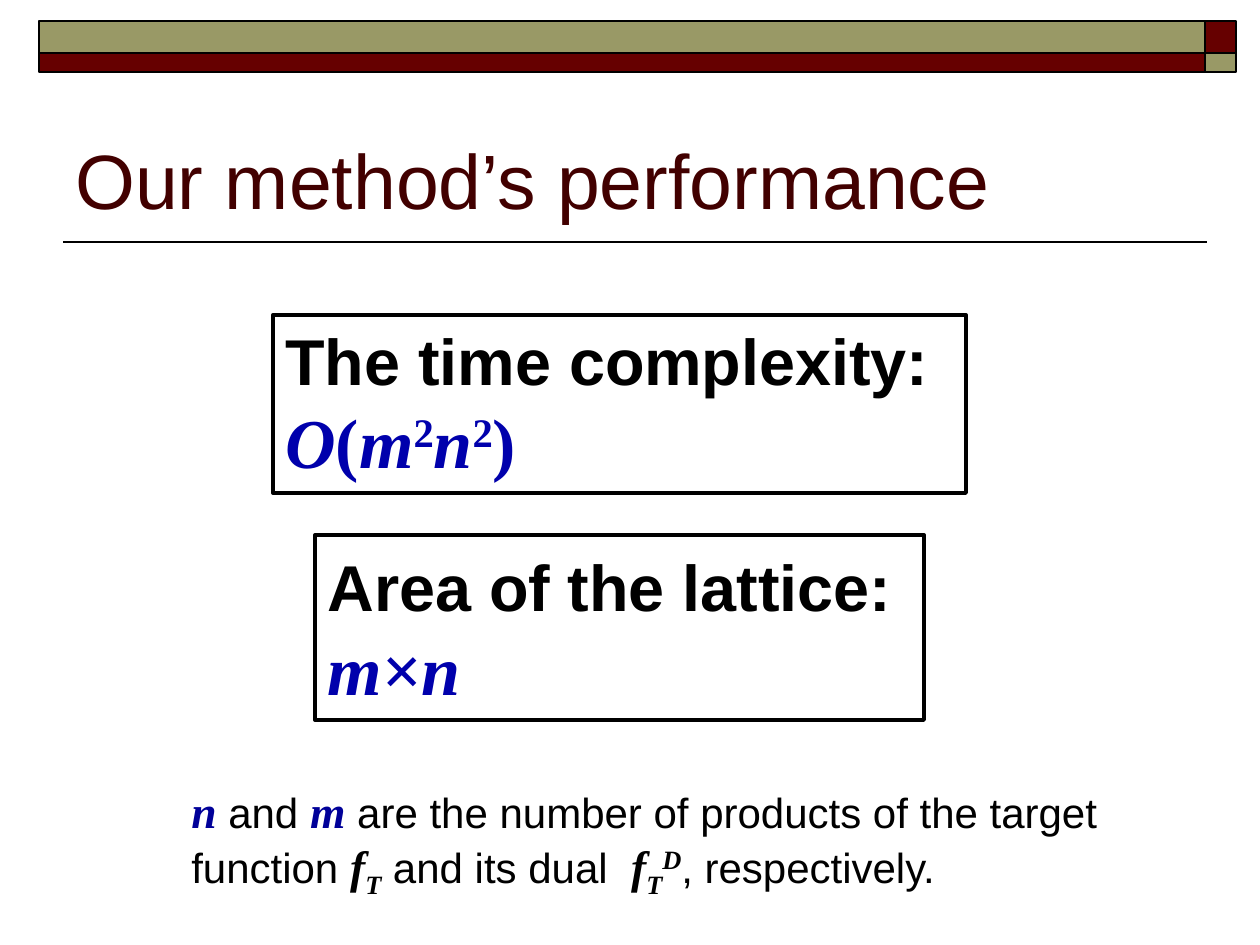
from dataclasses import dataclass
from lxml import etree
from pptx import Presentation
from pptx.dml.color import RGBColor
from pptx.enum.shapes import MSO_CONNECTOR, MSO_SHAPE
from pptx.enum.text import MSO_ANCHOR, MSO_AUTO_SIZE, PP_ALIGN
from pptx.oxml.ns import qn
from pptx.util import Emu, Pt

RECT = MSO_SHAPE.RECTANGLE
LINE = MSO_CONNECTOR.STRAIGHT
TOP, BOTTOM = MSO_ANCHOR.TOP, MSO_ANCHOR.BOTTOM
GROW = MSO_AUTO_SIZE.SHAPE_TO_FIT_TEXT
FIXED = MSO_AUTO_SIZE.NONE
LEFT = PP_ALIGN.LEFT


@dataclass(frozen=True)
class Theme:
    sans: str = "Arial"
    serif: str = "Times New Roman"
    black: str = "000000"
    olive: str = "999966"
    wine: str = "660000"
    title: str = "420000"
    math: str = "0000AC"
    var: str = "000099"
    big: int = 44
    head: int = 37
    form: int = 40
    note: int = 24
    sym: int = 26
    thin: float = 1
    thick: float = 2.25


T = Theme()
# font, size, colour, bold, italic, baseline
STYLES = {
    "title": (T.sans, T.big, T.title, False, False, 0),
    "head": (T.sans, T.head, T.black, True, False, 0),
    "gap": (T.serif, T.form, T.black, True, False, 0),
    "math": (T.serif, T.form, T.math, True, True, 0),
    "plain": (T.serif, T.form, T.math, True, False, 0),
    "power": (T.serif, T.form, T.math, True, False, 30),
    "note": (T.sans, T.note, T.black, False, False, 0),
    "var": (T.serif, T.sym, T.var, True, True, 0),
    "func": (T.serif, T.sym, T.black, True, True, 0),
    "sub": (T.serif, T.sym, T.black, True, True, -25),
    "sup": (T.serif, T.sym, T.black, True, True, 30),
}
TITLE = [[("Our method’s performance", "title")]]
AREA = [[("Area of the lattice:", "head"), (" ", "gap"), ("m×n", "math")]]
TIME = [
    [("The time complexity:", "head")],
    [("O", "math"), ("(", "plain"), ("m", "math"), ("2", "power"),
     ("n", "math"), ("2", "power"), (")", "plain")],
]
NOTE = [[
    ("n", "var"), (" and ", "note"), ("m", "var"),
    (" are the number of products of the target function ", "note"),
    ("f", "func"), ("T", "sub"), (" and its dual  ", "note"),
    ("f", "func"), ("T", "sub"), ("D", "sup"), (", respectively.", "note"),
]]
BOXES = [((315, 535, 609, 185), AREA), ((273, 315, 693, 178), TIME)]
COLS = [(39, 1166), (1205, 31)]
ROWS = [(21, 32), (53, 19)]
FILLS = [T.olive, T.wine]
RULE = (1207, 242, 63, 242)
WIDE, HIGH = 1260, 945
SCALE = 914400 / 126


def emu(*vals):
    return [Emu(round(v * SCALE)) for v in vals]


def color(code):
    return RGBColor.from_string(code)


def block(shapes, at, width, fill=None):
    shape = shapes.add_shape(RECT, *emu(*at))
    shape.shadow.inherit = False
    if fill:
        shape.fill.solid()
        shape.fill.fore_color.rgb = color(fill)
    else:
        shape.fill.background()
    shape.line.color.rgb = color(T.black)
    shape.line.width = Pt(width)
    return shape


def write(shape, paras, anchor=TOP, size=FIXED, before=0):
    frame = shape.text_frame
    frame.word_wrap = True
    frame.auto_size = size
    frame.vertical_anchor = anchor
    for i, parts in enumerate(paras):
        para = frame.add_paragraph() if i else frame.paragraphs[0]
        para.alignment = LEFT
        para.space_before = Pt(before)
        for text, style in parts:
            run = para.add_run()
            run.text = text
            font = run.font
            font.name, pts, code, font.bold, font.italic, base = STYLES[style]
            font.size = Pt(pts)
            font.color.rgb = color(code)
            if base:
                run._r.get_or_add_rPr().set("baseline", str(base * 1000))


def main():
    deck = Presentation()
    deck.slide_width, deck.slide_height = emu(WIDE, HIGH)
    shapes = deck.slides.add_slide(deck.slide_layouts[6]).shapes

    rule = shapes.add_connector(LINE, *emu(*RULE))
    rule.line.color.rgb = color(T.black)
    rule.line.width = Pt(T.thin)
    etree.SubElement(rule._element.spPr, qn("a:effectLst"))

    for r, (y, h) in enumerate(ROWS):
        for c, (x, w) in enumerate(COLS):
            block(shapes, (x, y, w, h), T.thin, FILLS[(r + c) % 2])

    write(shapes.add_textbox(*emu(63, 73, 1134, 158)), TITLE, BOTTOM)
    for at, paras in BOXES:
        write(block(shapes, at, T.thick), paras, size=GROW)
    write(shapes.add_textbox(*emu(179, 777, 945, 136)), NOTE, before=5)

    deck.save("out.pptx")


if __name__ == "__main__":
    main()
